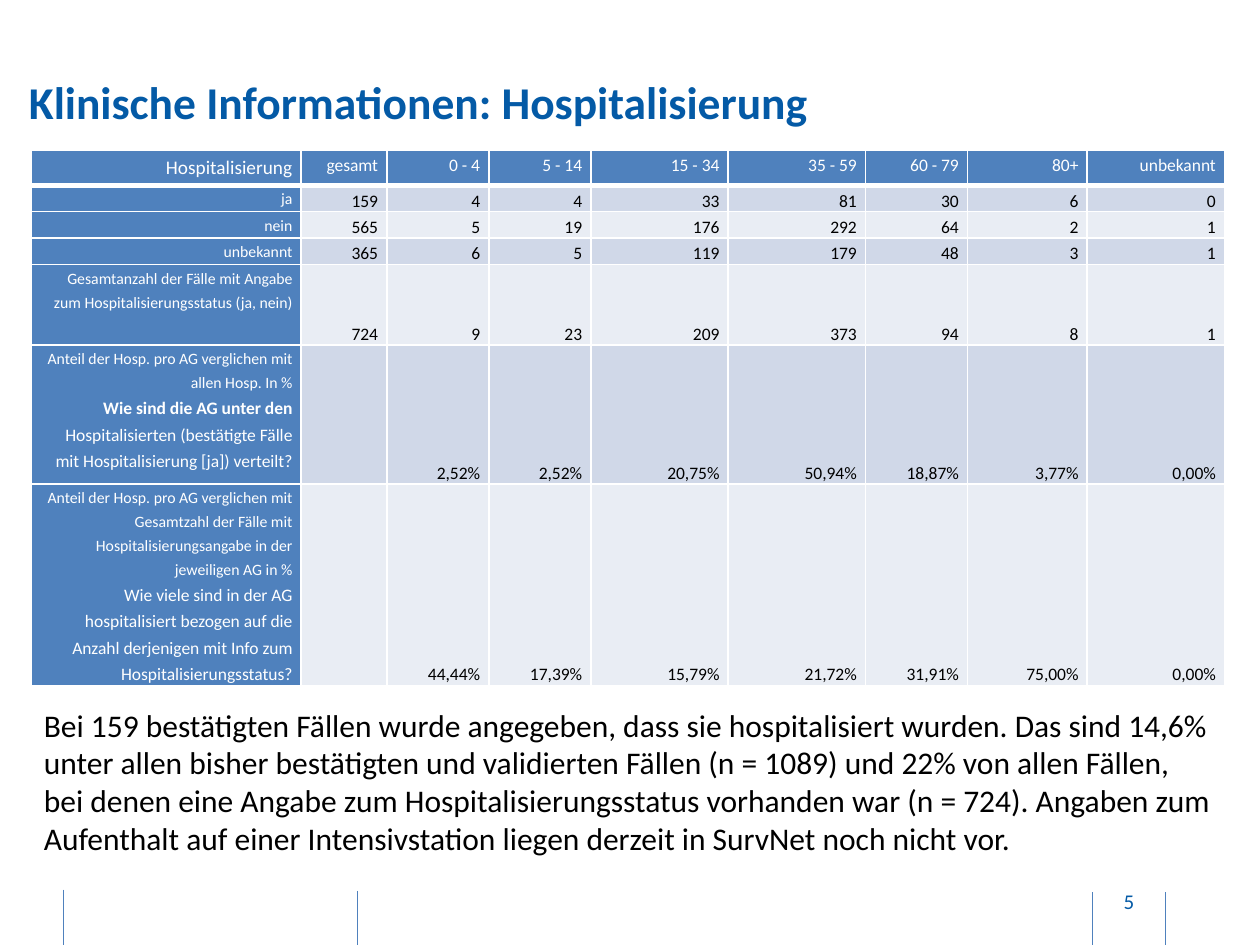
from lxml import etree
from pptx import Presentation
from pptx.dml.color import RGBColor
from pptx.enum.shapes import MSO_CONNECTOR
from pptx.enum.text import MSO_ANCHOR, PP_ALIGN
from pptx.oxml.ns import qn
from pptx.util import Inches, Pt

STRAIGHT = MSO_CONNECTOR.STRAIGHT
TOP, MIDDLE, BOTTOM = MSO_ANCHOR.TOP, MSO_ANCHOR.MIDDLE, MSO_ANCHOR.BOTTOM
LEFT, CENTER, RIGHT = PP_ALIGN.LEFT, PP_ALIGN.CENTER, PP_ALIGN.RIGHT

TITLE_BLUE = RGBColor(0x04, 0x5A, 0xA6)
HEADER_BLUE = RGBColor(0x4F, 0x81, 0xBD)
BAND_DARK = RGBColor(0xD0, 0xD8, 0xE8)
BAND_LIGHT = RGBColor(0xE9, 0xED, 0xF4)
WHITE = RGBColor(0xFF, 0xFF, 0xFF)
BLACK = RGBColor(0, 0, 0)
FONT = "Calibri"

COLUMN_WIDTHS = [2.14, 0.68, 0.81, 0.81, 1.09, 1.09, 0.81, 0.95, 1.09]
ROW_HEIGHTS = [0.28, 0.21, 0.21, 0.21, 0.64, 1.1, 1.6]
AGE_GROUPS = ["gesamt", "0 - 4", "5 - 14", "15 - 34", "35 - 59",
              "60 - 79", "80+", "unbekannt"]
# Each row label is a list of paragraphs: (text, size, length of bold lead-in)
QUESTION_LEAD = "Wie sind die AG unter den "
ROWS = [
    ([("ja", 9, 0)],
     ["159", "4", "4", "33", "81", "30", "6", "0"]),
    ([("nein", 9, 0)],
     ["565", "5", "19", "176", "292", "64", "2", "1"]),
    ([("unbekannt", 9, 0)],
     ["365", "6", "5", "119", "179", "48", "3", "1"]),
    ([("Gesamtanzahl der Fälle mit Angabe zum Hospitalisierungsstatus (ja, nein)", 9, 0)],
     ["724", "9", "23", "209", "373", "94", "8", "1"]),
    ([("Anteil der Hosp. pro AG verglichen mit allen Hosp. In %", 9, 0),
      (QUESTION_LEAD + "Hospitalisierten (bestätigte Fälle mit "
       "Hospitalisierung [ja]) verteilt?", 10, len(QUESTION_LEAD))],
     ["", "2,52%", "2,52%", "20,75%", "50,94%", "18,87%", "3,77%", "0,00%"]),
    ([("Anteil der Hosp. pro AG verglichen mit Gesamtzahl der Fälle mit "
       "Hospitalisierungsangabe in der jeweiligen AG in %", 9, 0),
      ("Wie viele sind in der AG hospitalisiert bezogen auf die Anzahl "
       "derjenigen mit Info zum Hospitalisierungsstatus?", 10, 0)],
     ["", "44,44%", "17,39%", "15,79%", "21,72%", "31,91%", "75,00%", "0,00%"]),
]
SUMMARY = (
    "Bei 159 bestätigten Fällen wurde angegeben, dass sie hospitalisiert wurden. "
    "Das sind 14,6% unter allen bisher bestätigten und validierten Fällen (n = 1089) "
    "und 22% von allen Fällen, bei denen eine Angabe zum Hospitalisierungsstatus "
    "vorhanden war (n = 724). Angaben zum Aufenthalt auf einer Intensivstation "
    "liegen derzeit in SurvNet noch nicht vor."
)


def write(paragraph, text, size, color, bold=False, align=LEFT, spacing=None):
    """Add one formatted run to the paragraph."""
    paragraph.alignment = align
    if spacing:
        paragraph.line_spacing = spacing
    run = paragraph.add_run()
    run.text = text
    font = run.font
    font.name, font.size, font.bold = FONT, Pt(size), bold
    font.color.rgb = color


def add_text(slide, left, top, width, height, text, margins=(0, 0),
             anchor=TOP, **style):
    box = slide.shapes.add_textbox(Inches(left), Inches(top), Inches(width), Inches(height))
    frame = box.text_frame
    frame.word_wrap = True
    frame.vertical_anchor = anchor
    frame.margin_left = frame.margin_right = Inches(margins[0])
    frame.margin_top = frame.margin_bottom = Inches(margins[1])
    write(frame.paragraphs[0], text, **style)


def add_border(cell, bottom_width=1):
    properties = cell._tc.get_or_add_tcPr()
    for side in "LRTB":
        width = bottom_width if side == "B" else 1
        line = etree.SubElement(properties, qn(f"a:ln{side}"), w=str(Pt(width)))
        fill = etree.SubElement(line, qn("a:solidFill"))
        etree.SubElement(fill, qn("a:srgbClr"), val=str(WHITE))


def fill_cell(cell, paragraphs, fill, color, anchor=TOP, bottom_width=1):
    """Fill a cell with (text, size, length of bold lead-in) paragraphs."""
    add_border(cell, bottom_width)
    cell.fill.solid()
    cell.fill.fore_color.rgb = fill
    cell.vertical_anchor = anchor
    cell.margin_left = cell.margin_right = Inches(0.07)
    cell.margin_top = cell.margin_bottom = 0
    frame = cell.text_frame
    for index, (text, size, lead) in enumerate(paragraphs):
        paragraph = frame.add_paragraph() if index else frame.paragraphs[0]
        for part, bold in ((text[:lead], True), (text[lead:], False)):
            if part:
                write(paragraph, part, size, color, bold, align=RIGHT, spacing=1.25)


def add_hospital_table(slide):
    table = slide.shapes.add_table(
        len(ROW_HEIGHTS), len(COLUMN_WIDTHS), Inches(0.25), Inches(1.19),
        Inches(sum(COLUMN_WIDTHS)), Inches(sum(ROW_HEIGHTS))).table
    for column, width in zip(table.columns, COLUMN_WIDTHS):
        column.width = Inches(width)
    for row, height in zip(table.rows, ROW_HEIGHTS):
        row.height = Inches(height)

    for c, heading in enumerate(["Hospitalisierung"] + AGE_GROUPS):
        fill_cell(table.cell(0, c), [(heading, 10 if c else 11, 0)],
                  HEADER_BLUE, WHITE, bottom_width=3)
    for r, (label, values) in enumerate(ROWS, start=1):
        fill_cell(table.cell(r, 0), label, HEADER_BLUE, WHITE)
        band = BAND_DARK if r % 2 else BAND_LIGHT
        for c, value in enumerate(values, start=1):
            paragraphs = [(value, 10, 0)] if value else []
            fill_cell(table.cell(r, c), paragraphs, band, BLACK, BOTTOM)


def add_footer_rule(slide, x, top):
    rule = slide.shapes.add_connector(
        STRAIGHT, Inches(x), Inches(top), Inches(x), Inches(top + 0.45))
    rule.line.color.rgb = HEADER_BLUE
    rule.line.width = Pt(0.5)
    etree.SubElement(rule._element.spPr, qn("a:effectLst"))


def main():
    presentation = Presentation()
    presentation.slide_width = Inches(10)
    presentation.slide_height = Inches(7.5)
    slide = presentation.slides.add_slide(presentation.slide_layouts[6])

    for x, top in ((8.67, 7.08), (2.84, 7.07), (0.5, 7.06), (9.25, 7.08)):
        add_footer_rule(slide, x, top)
    add_text(slide, 0.23, 0.59, 9, 0.6, "Klinische Informationen: Hospitalisierung",
             size=26, color=TITLE_BLUE, bold=True)
    add_hospital_table(slide)
    add_text(slide, 0.25, 5.55, 9.47, 1.31, SUMMARY, margins=(0.1, 0.05),
             size=18, color=BLACK)
    add_text(slide, 8.69, 6.95, 0.54, 0.4, "5", margins=(0, 0.05), anchor=MIDDLE,
             size=12, color=TITLE_BLUE, align=CENTER)
    presentation.save("out.pptx")


if __name__ == "__main__":
    main()
